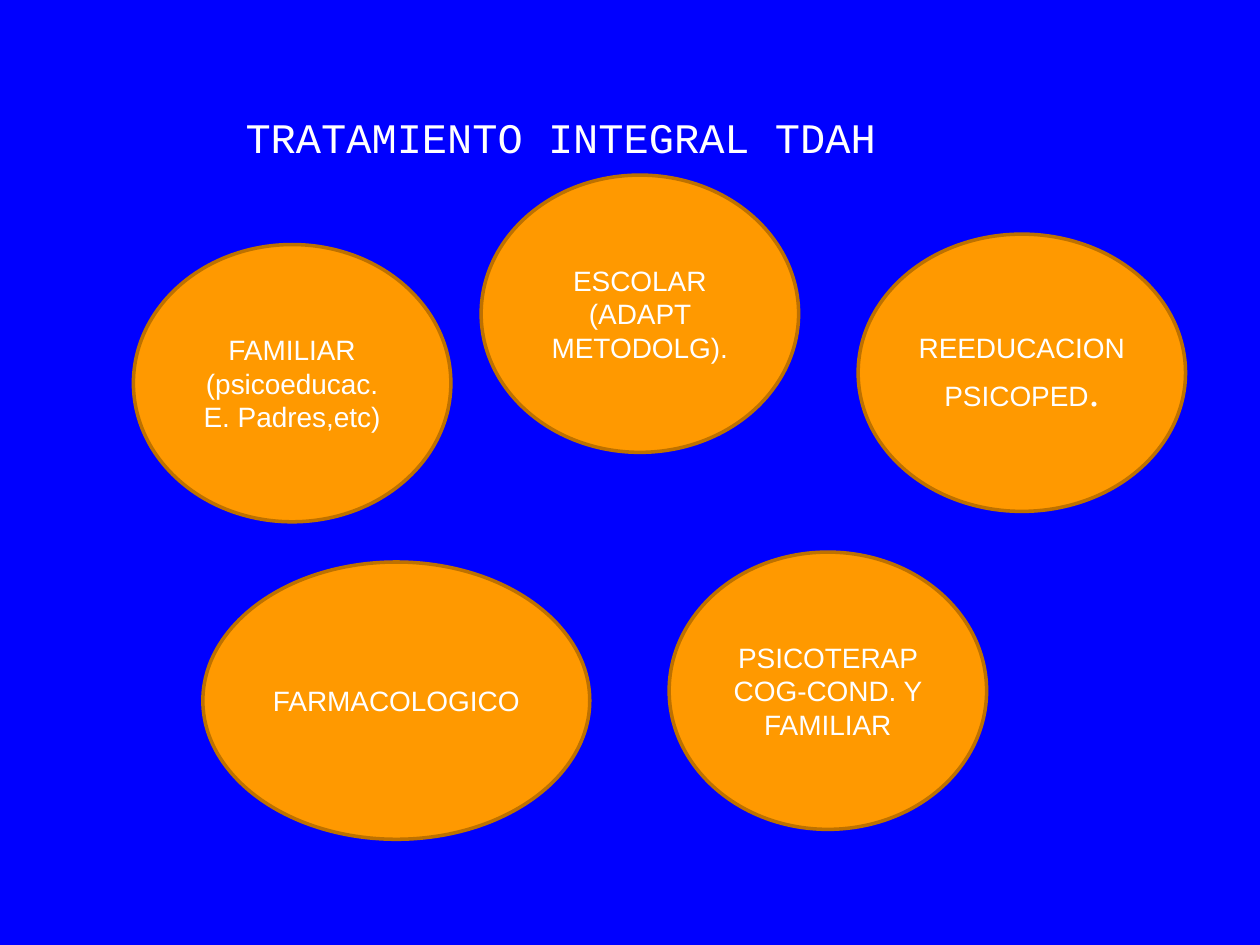
import pptx
import pptx.dml.color
import pptx.enum.shapes
import pptx.enum.text
import pptx.util

Cm = pptx.util.Cm
Pt = pptx.util.Pt

COLORS = {
    "background": "0000FF",
    "treatment": "FF9900",
    "outline": "BD7100",
    "text": "FFFFFF",
}
OVAL_HEIGHT = 5.59
TREATMENTS = [
    (2.69, 4.93, 6.4, ["FAMILIAR", "(psicoeducac. E. Padres,etc)"]),
    (17.3, 4.72, 6.6, ["REEDUCACION PSICOPED"]),
    (13.49, 11.13, 6.4, ["PSICOTERAP COG-COND. Y FAMILIAR"]),
    (4.09, 11.33, 7.8, ["FARMACOLOGICO"]),
    (9.7, 3.53, 6.4, ["ESCOLAR", "(ADAPT METODOLG)."]),
]


def color(name):
    return pptx.dml.color.RGBColor.from_string(COLORS[name])


def set_font(font, name, size):
    font.name = name
    font.size = Pt(size)
    font.color.rgb = color("text")


def paint_background(slide):
    fill = slide.background.fill
    fill.solid()
    fill.fore_color.rgb = color("background")


def add_title(slide, text):
    title = slide.shapes.add_textbox(Cm(4.7), Cm(2.13), Cm(16.94), Cm(1.3))
    title.text_frame.word_wrap = True
    title.text_frame.auto_size = pptx.enum.text.MSO_AUTO_SIZE.SHAPE_TO_FIT_TEXT
    heading = title.text_frame.paragraphs[0]
    heading.text = text
    set_font(heading.font, "Courier New", 24)


def add_treatment(slide, left, top, width, lines):
    oval = slide.shapes.add_shape(
        pptx.enum.shapes.MSO_SHAPE.OVAL,
        Cm(left), Cm(top), Cm(width), Cm(OVAL_HEIGHT),
    )
    oval.shadow.inherit = False
    oval.fill.solid()
    oval.fill.fore_color.rgb = color("treatment")
    oval.line.color.rgb = color("outline")
    oval.line.width = Pt(2)
    label = oval.text_frame
    label.word_wrap = True
    label.vertical_anchor = pptx.enum.text.MSO_ANCHOR.MIDDLE
    label.text = "\n".join(lines)
    for line in label.paragraphs:
        line.alignment = pptx.enum.text.PP_ALIGN.CENTER
        set_font(line.font, "Arial", 16)
    return oval


def add_full_stop(oval):
    stop = oval.text_frame.paragraphs[-1].add_run()
    stop.text = "."
    set_font(stop.font, "Times New Roman", 24)


def main():
    deck = pptx.Presentation()
    deck.slide_width = Cm(25.4)
    deck.slide_height = Cm(19.05)
    slide = deck.slides.add_slide(deck.slide_layouts[6])
    paint_background(slide)
    add_title(slide, "TRATAMIENTO INTEGRAL TDAH")
    family, reeducation, *others = [
        add_treatment(slide, *treatment) for treatment in TREATMENTS
    ]
    add_full_stop(reeducation)
    deck.save("out.pptx")


if __name__ == "__main__":
    main()
